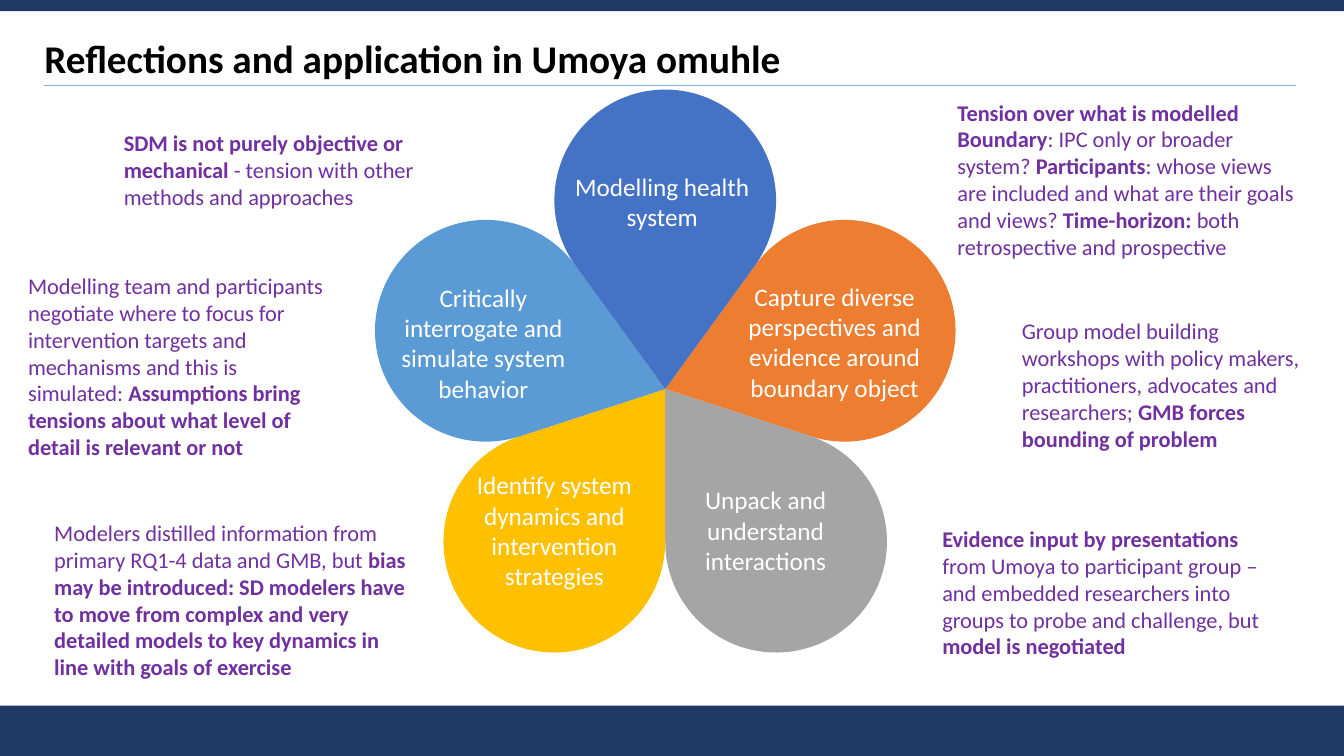
from math import cos, pi, sin, tan

from lxml.etree import SubElement
from pptx import Presentation
from pptx.dml.color import RGBColor
from pptx.enum.shapes import MSO_CONNECTOR, MSO_SHAPE
from pptx.enum.text import MSO_ANCHOR, MSO_AUTO_SIZE, PP_ALIGN
from pptx.oxml.ns import qn
from pptx.util import Inches, Pt

FONT = "Calibri"
NAVY = RGBColor(0x20, 0x38, 0x64)
RULE_BLUE = RGBColor(0x8F, 0xAA, 0xDC)
BLACK = RGBColor(0, 0, 0)
WHITE = RGBColor(0xFF, 0xFF, 0xFF)
PURPLE = RGBColor(0x70, 0x30, 0xA0)
ORANGE = RGBColor(0xED, 0x7D, 0x31)
GREY = RGBColor(0xA5, 0xA5, 0xA5)
YELLOW = RGBColor(0xFF, 0xC0, 0x00)
LIGHT_BLUE = RGBColor(0x5B, 0x9B, 0xD5)
BLUE = RGBColor(0x44, 0x72, 0xC4)

SLIDE_WIDTH = Inches(40 / 3)
HUB_X, HUB_Y = 6.6, 3.86
PETAL_RADIUS = 1.1
ARC_CURVES = 4

PETALS = [ORANGE, GREY, YELLOW, LIGHT_BLUE, BLUE]

PETAL_LABELS = [
    ((5.47, 1.65, 2.2, 0.71), "Modelling health system"),
    ((6.59, 4.76, 2.01, 1.01), "Unpack and understand interactions"),
    ((4.52, 4.61, 1.96, 1.31), "Identify system dynamics and intervention strategies"),
    ((7.31, 2.74, 1.94, 1.31),
     "Capture diverse perspectives and evidence around boundary object"),
    ((3.79, 2.75, 2.01, 1.31), "Critically interrogate and simulate system behavior"),
]

NOTES = [
    ((9.4, 0.93, 3.61, 1.72), [
        [("Tension over what is modelled", True)],
        [("Boundary", True),
         (": IPC only or broader system? ", False),
         ("Participants", True),
         (": whose views are included and what are their goals and views? ", False),
         ("Time-horizon: ", True),
         ("both retrospective and prospective", False)]]),
    ((9.25, 5.16, 3.61, 1.45), [
        [("Evidence input by presentations ", True),
         ("from Umoya to participant group – and embedded researchers into "
          "groups to probe and challenge, but ", False),
         ("model is negotiated", True)]]),
    ((0.44, 5.1, 3.74, 1.72), [
        [("Modelers distilled information from primary RQ1-4 data and GMB, but ", False),
         ("bias may be introduced: SD modelers have to move from complex and very "
          "detailed models to key dynamics in line with goals of exercise", True)]]),
    ((0.18, 2.65, 3.21, 1.99), [
        [("Modelling team and participants negotiate where to focus for intervention "
          "targets and mechanisms and this is simulated: ", False),
         ("Assumptions bring tensions about what level of detail is relevant or not",
          True)]]),
    ((10.04, 3.1, 3.14, 1.45), [
        [("Group model building workshops with policy makers, practitioners, "
          "advocates and researchers; ", False),
         ("GMB forces bounding of problem", True)]]),
    ((1.13, 1.23, 3.21, 0.91), [
        [("SDM is not purely objective or mechanical ", True),
         ("- tension with other methods and approaches", False)]]),
]


def add_run(p, text, size, color, bold=False):
    r = p.add_run()
    r.text = text
    r.font.name = FONT
    r.font.size = Pt(size)
    r.font.bold = bold
    r.font.color.rgb = color


def paint(sp, color):
    sp.fill.solid()
    sp.fill.fore_color.rgb = color
    sp.line.fill.background()
    sp.shadow.inherit = False


def add_bar(s, top, height):
    sp = s.shapes.add_shape(MSO_SHAPE.RECTANGLE, 0, Inches(top),
                            SLIDE_WIDTH, Inches(height))
    paint(sp, NAVY)


def add_rule(s):
    line = s.shapes.add_connector(MSO_CONNECTOR.STRAIGHT, Inches(0.44), Inches(0.85),
                                  Inches(12.86), Inches(0.85))
    line.line.color.rgb = RULE_BLUE
    line.line.width = Pt(1)
    SubElement(line._element.spPr, qn("a:effectLst"))


def petal_steps(cx, cy, direction):
    sweep = 7 * pi / 5 / ARC_CURVES
    handle = 4 / 3 * tan(sweep / 4)

    def rim(angle, pull=0):
        return (cx + PETAL_RADIUS * (sin(angle) + pull * cos(angle)),
                cy - PETAL_RADIUS * (cos(angle) - pull * sin(angle)))

    angles = [direction + sweep * (i - ARC_CURVES / 2) for i in range(ARC_CURVES + 1)]
    steps = [("a:moveTo", [rim(angles[0])])]
    for a, b in zip(angles, angles[1:]):
        steps.append(("a:cubicBezTo", [rim(a, handle), rim(b, -handle), rim(b)]))
    return steps + [("a:lnTo", [(HUB_X, HUB_Y)]), ("a:close", [])]


def add_petal(s, direction, color):
    distance = PETAL_RADIUS / sin(pi / 5)
    cx = HUB_X + distance * sin(direction)
    cy = HUB_Y - distance * cos(direction)
    left, top = min(cx - PETAL_RADIUS, HUB_X), min(cy - PETAL_RADIUS, HUB_Y)
    right, bottom = max(cx + PETAL_RADIUS, HUB_X), max(cy + PETAL_RADIUS, HUB_Y)
    builder = s.shapes.build_freeform(Inches(left), Inches(top))
    builder.add_line_segments([(Inches(right), Inches(bottom))])
    sp = builder.convert_to_shape()
    outline = next(sp._element.iter(qn("a:path")))
    for child in list(outline):
        outline.remove(child)
    for tag, points in petal_steps(cx, cy, direction):
        step = SubElement(outline, qn(tag))
        for x, y in points:
            SubElement(step, qn("a:pt"), x=str(Inches(x - left)), y=str(Inches(y - top)))
    paint(sp, color)


def add_text(s, box, paragraphs, size, color, align):
    tf = s.shapes.add_textbox(*map(Inches, box)).text_frame
    tf.word_wrap = True
    tf.auto_size = MSO_AUTO_SIZE.SHAPE_TO_FIT_TEXT
    for i, runs in enumerate(paragraphs):
        p = tf.add_paragraph() if i else tf.paragraphs[0]
        p.alignment = align
        for text, bold in runs:
            add_run(p, text, size, color, bold)


def set_title(s, text):
    title = s.shapes.title
    title.left, title.top = Inches(0.44), Inches(0.29)
    title.width, title.height = Inches(12.42), Inches(0.57)
    tf = title.text_frame
    tf.auto_size = MSO_AUTO_SIZE.NONE
    tf.vertical_anchor = MSO_ANCHOR.MIDDLE
    tf.margin_left = 0
    p = tf.paragraphs[0]
    p.alignment = PP_ALIGN.LEFT
    add_run(p, text, 28, BLACK, True)


def main():
    prs = Presentation()
    prs.slide_width, prs.slide_height = SLIDE_WIDTH, Inches(7.5)
    s = prs.slides.add_slide(prs.slide_layouts[5])
    set_title(s, "Reflections and application in Umoya omuhle")
    add_bar(s, 7, 0.5)
    add_rule(s)
    add_bar(s, 0, 0.11)
    for i, color in enumerate(PETALS, start=1):
        add_petal(s, i * 2 * pi / len(PETALS), color)
    for box, label in PETAL_LABELS:
        add_text(s, box, [[(label, False)]], 18, WHITE, PP_ALIGN.CENTER)
    for box, paragraphs in NOTES:
        add_text(s, box, paragraphs, 16, PURPLE, PP_ALIGN.LEFT)
    prs.save("out.pptx")


if __name__ == "__main__":
    main()
